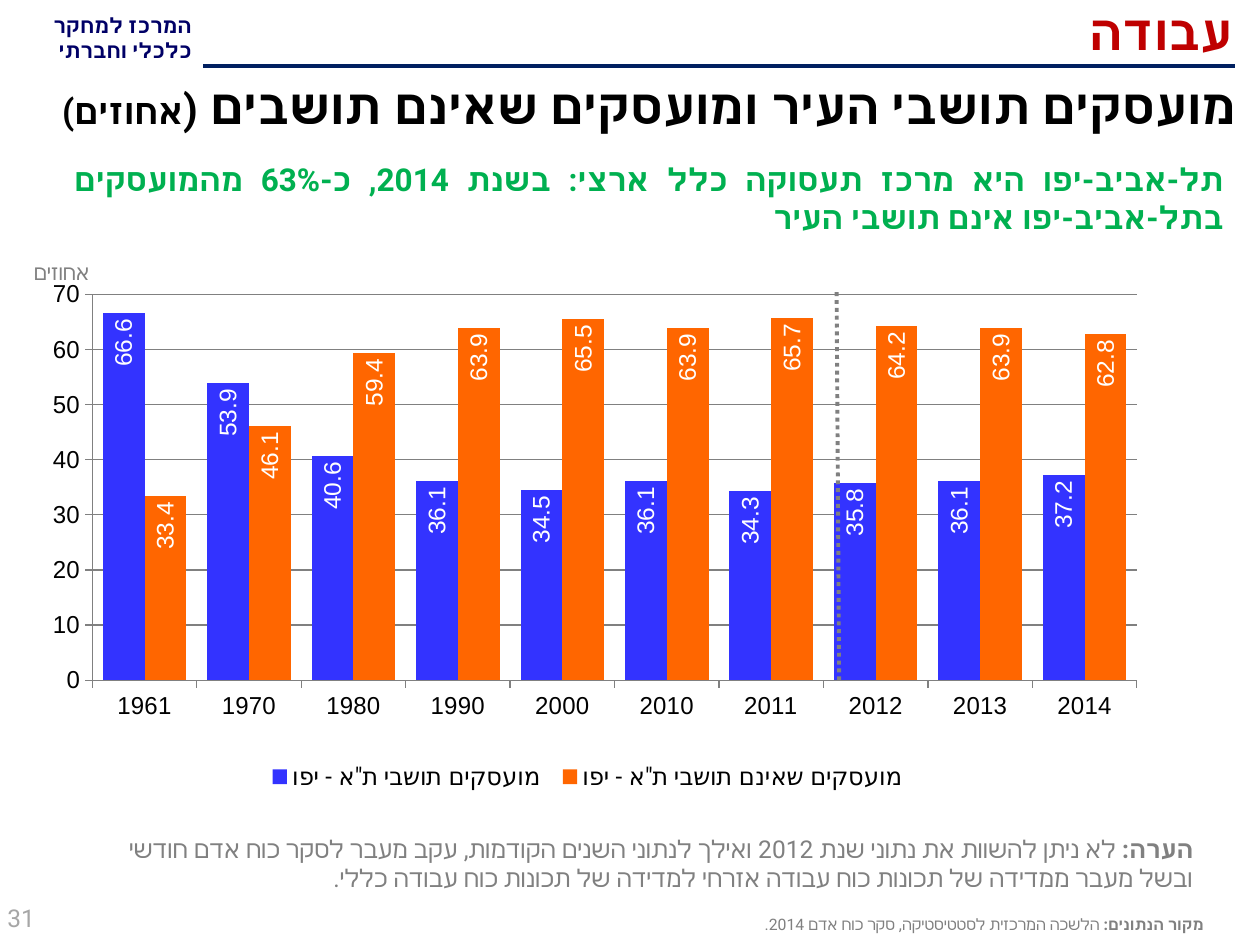
from collections import namedtuple

from lxml import etree
from pptx import Presentation, util as u
from pptx.chart import data as chart_data
from pptx.dml import color
from pptx.enum import chart as charts, dml, shapes, text
from pptx.oxml import ns, parse_xml

COLUMNS, ROWS = 100, 75
CELL = u.Inches(0.1)
GRAY = "808080"
HEBREW_FONT = "Roboto"
RIGHT, LEFT = text.PP_ALIGN.RIGHT, text.PP_ALIGN.LEFT
Box = namedtuple("Box", "left top width height")
Run = namedtuple("Run", "text size bold")

YEARS = ["1961", "1970", "1980", "1990", "2000", "2010", "2011", "2012", "2013", "2014"]
SERIES = [
    ('מועסקים תושבי ת"א - יפו', "3333FF",
     [66.6, 53.9, 40.6, 36.1, 34.5, 36.1, 34.3, 35.8, 36.1, 37.2]),
    ('מועסקים שאינם תושבי ת"א - יפו', "FF6600",
     [33.4, 46.1, 59.4, 63.9, 65.5, 63.9, 65.7, 64.2, 63.9, 62.8]),
]


def cells(*counts):
    return [u.Emu(round(count * CELL)) for count in counts]


def rgb(value):
    return color.RGBColor.from_string(value)


def part(box, left, top, width, height):
    """Box inside another, given as shares of it."""
    return Box(box.left + left * box.width, box.top + top * box.height,
               width * box.width, height * box.height)


def set_font(font, size, fill, name="Arial", bold=False):
    """Latin letters and digits take the named font, Hebrew the common one."""
    font.size, font.bold, font.name = u.Pt(size), bold, name
    font.color.rgb = rgb(fill)
    script_font = etree.SubElement(font._element, ns.qn("a:cs"))
    script_font.set("typeface", HEBREW_FONT)


def add_text(slide, box, *paragraphs, fill=GRAY, font="Arial", align=RIGHT,
             anchor=text.MSO_ANCHOR.TOP):
    """Right-to-left text; each paragraph is a list of runs."""
    frame = slide.shapes.add_textbox(*cells(*box)).text_frame
    frame.word_wrap, frame.vertical_anchor = True, anchor
    for index, runs in enumerate(paragraphs):
        paragraph = frame.add_paragraph() if index else frame.paragraphs[0]
        paragraph.alignment = align
        paragraph._p.get_or_add_pPr().set("rtl", "1")
        for item in runs:
            run = paragraph.add_run()
            run.text = item.text
            set_font(run.font, item.size, fill, font, item.bold)


def add_line(slide, start, end, fill, dash=None):
    line = slide.shapes.add_connector(shapes.MSO_CONNECTOR.STRAIGHT,
                                      *cells(*start, *end))
    line.line.color.rgb, line.line.width = rgb(fill), u.Pt(2.25)
    if dash:
        line.line.dash_style = dash
    etree.SubElement(line._element.spPr, ns.qn("a:effectLst"))


def layout_xml(x, y, width, height, inner=False):
    target = '<c:layoutTarget val="inner"/>' if inner else ""
    return parse_xml(
        f'<c:layout {ns.nsdecls("c")}><c:manualLayout>{target}'
        '<c:xMode val="edge"/><c:yMode val="edge"/>'
        f'<c:x val="{x}"/><c:y val="{y}"/><c:w val="{width}"/><c:h val="{height}"/>'
        '</c:manualLayout></c:layout>')


def header(slide, box):
    add_text(slide, part(box, 0, 0.09, 0.162, 0.91),
             [Run("המרכז למחקר", 12, True)], [Run("כלכלי וחברתי", 12, True)],
             fill="000066", font="Roboto")
    rule = box.top + 0.93 * box.height
    add_line(slide, (98, rule), (16.1, rule), "002060")
    add_text(slide, part(box, 0.17, -0.06, 0.818, 0.98),
             [Run("עבודה", 28, True)], fill="BF0000", font="Roboto")


def headings(slide, box):
    add_text(slide, part(box, 0, 0, 1, 0.41),
             [Run("מועסקים תושבי העיר ומועסקים שאינם תושבים ", 28, True),
              Run("(", 24, True), Run("אחוזים)", 20, True)], fill="000000")
    add_text(slide, part(box, 0.03, 0.46, 0.96, 0.54),
             [Run("תל-אביב-יפו היא מרכז תעסוקה כלל ארצי: בשנת 2014, כ-63% "
                  "מהמועסקים בתל-אביב-יפו אינם תושבי העיר", 18, True)],
             fill="00B050", align=text.PP_ALIGN.JUSTIFY)


def style_axes(chart):
    values = chart.value_axis
    values.minimum_scale, values.maximum_scale, values.major_unit = 0, 70, 10
    values.has_major_gridlines = True
    values.major_gridlines.format.line.color.rgb = rgb(GRAY)
    values.tick_labels.number_format = "0"
    values.tick_labels.number_format_is_linked = False
    for axis in (values, chart.category_axis):
        axis.major_tick_mark = charts.XL_TICK_MARK.OUTSIDE
        axis.format.line.color.rgb = rgb(GRAY)
        set_font(axis.tick_labels.font, 14, "000000")


def style_series(series, fill):
    series.format.fill.solid()
    series.format.fill.fore_color.rgb = rgb(fill)
    labels = series.data_labels
    labels.show_value = True
    labels.position = charts.XL_LABEL_POSITION.INSIDE_END
    set_font(labels.font, 14, "FFFFFF")
    body = labels._element.find(ns.qn("c:txPr")).find(ns.qn("a:bodyPr"))
    body.set("rot", "-5400000")
    body.set("vert", "horz")


def employment_chart(slide, box):
    data = chart_data.CategoryChartData(number_format="0.0")
    data.categories = YEARS
    for name, _, values in SERIES:
        data.add_series(name, values)
    chart = slide.shapes.add_chart(charts.XL_CHART_TYPE.COLUMN_CLUSTERED,
                                   *cells(*box), data).chart
    chart.has_title = False
    set_font(chart.font, 18, "000000")
    style_axes(chart)
    plot = chart.plots[0]
    plot.gap_width, plot.overlap, plot.vary_by_categories = 50, 0, False
    for series, (_, fill, _) in zip(plot.series, SERIES):
        style_series(series, fill)

    chart.has_legend = True
    legend = chart.legend
    legend.position = charts.XL_LEGEND_POSITION.BOTTOM
    legend.include_in_layout = False
    set_font(legend.font, 14, "000000")
    legend._element.find(ns.qn("c:legendPos")).addnext(
        layout_xml(0.17, 0.88, 0.61, 0.08))
    area = chart._chartSpace.chart.plotArea
    for old in area.findall(ns.qn("c:layout")):
        area.remove(old)
    area.insert(0, layout_xml(0.016, 0.034, 0.968, 0.709, inner=True))

    top, bottom = box.top + 0.03 * box.height, box.top + 0.743 * box.height
    add_line(slide, (66.4, top), (66.6, bottom), GRAY, dml.MSO_LINE.ROUND_DOT)
    add_text(slide, part(box, -0.08, -0.042, 0.176, 0.07),
             [Run("אחוזים", 12, False)], align=text.PP_ALIGN.CENTER)


def footer(slide, box):
    add_text(slide, part(box, 0.08, 0, 0.881, 0.61),
             [Run("הערה: ", 14, True),
              Run("לא ניתן להשוות את נתוני שנת 2012 ואילך לנתוני השנים הקודמות, עקב מעבר "
                  "לסקר כוח אדם חודשי ובשל מעבר ממדידה של תכונות כוח עבודה אזרחי "
                  "למדידה של תכונות כוח עבודה כללי.", 14, False)])
    add_text(slide, part(box, 0, 0.53, 0.23, 0.47), [Run("31", 14, False)],
             fill="A6A6A6", align=LEFT, anchor=text.MSO_ANCHOR.MIDDLE)
    add_text(slide, part(box, 0.276, 0.69, 0.693, 0.27),
             [Run("מקור הנתונים: ", 9, True),
              Run("הלשכה המרכזית לסטטיסטיקה, סקר כוח אדם 2014.", 9, False)])


def main():
    presentation = Presentation()
    presentation.slide_width, presentation.slide_height = cells(COLUMNS, ROWS)
    slide = presentation.slides.add_slide(presentation.slide_layouts[6])
    header(slide, Box(0, 0, COLUMNS, 5.6))
    headings(slide, Box(2, 5.5, 97.1, 14.6))
    employment_chart(slide, Box(4.2, 21.9, 87.4, 43.2))
    footer(slide, Box(-0.4, 65.7, COLUMNS, 9.3))
    presentation.save("out.pptx")


if __name__ == "__main__":
    main()
